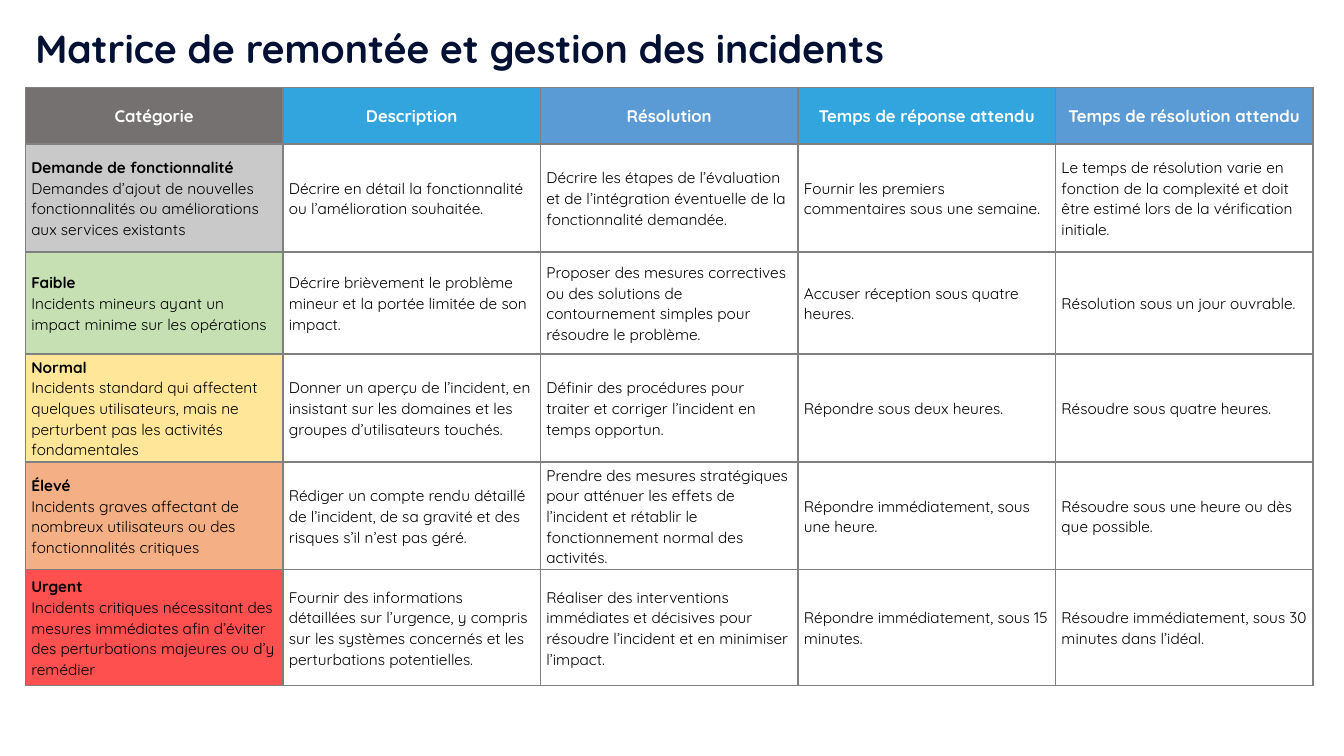
from dataclasses import dataclass

from lxml.etree import SubElement
from pptx import Presentation
from pptx.dml.color import RGBColor
from pptx.enum.text import MSO_ANCHOR, MSO_AUTO_SIZE, PP_ALIGN
from pptx.oxml.ns import qn
from pptx.util import Cm, Pt


@dataclass(frozen=True)
class Theme:
    """Colours, font and type sizes of the slide."""
    font: str = "Quicksand"
    title_color: str = "011033"
    header_color: str = "FFFFFF"
    body_color: str = "000000"
    border_color: str = "808080"
    header_fills: tuple = ("757171", "32A5DE", "5B9BD5", "32A5DE", "5B9BD5")
    level_fills: tuple = ("C9C9C9", "C6E0B4", "FFE699", "F4B084", "FF5050")
    title_size: int = 28
    header_size: int = 12
    body_size: int = 11
    line_spacing: float = 1.07


@dataclass(frozen=True)
class Box:
    """A rectangle on the page."""
    left: int
    top: int
    width: int
    height: int


THEME = Theme()
TITLE = "Matrice de remontée et gestion des incidents"
HEADERS = ("Catégorie", "Description", "Résolution",
           "Temps de réponse attendu", "Temps de résolution attendu")
LEVELS = (
    ("Demande de fonctionnalité",
     "Demandes d’ajout de nouvelles fonctionnalités ou améliorations aux services existants",
     "Décrire en détail la fonctionnalité ou l’amélioration souhaitée.",
     "Décrire les étapes de l’évaluation et de l’intégration éventuelle de la fonctionnalité demandée.",
     "Fournir les premiers commentaires sous une semaine.",
     "Le temps de résolution varie en fonction de la complexité et doit être estimé lors de la vérification initiale."),
    ("Faible",
     "Incidents mineurs ayant un impact minime sur les opérations",
     "Décrire brièvement le problème mineur et la portée limitée de son impact.",
     "Proposer des mesures correctives ou des solutions de contournement simples pour résoudre le problème.",
     "Accuser réception sous quatre heures.",
     "Résolution sous un jour ouvrable."),
    ("Normal",
     "Incidents standard qui affectent quelques utilisateurs, mais ne perturbent pas les activités fondamentales",
     "Donner un aperçu de l’incident, en insistant sur les domaines et les groupes d’utilisateurs touchés.",
     "Définir des procédures pour traiter et corriger l’incident en temps opportun.",
     "Répondre sous deux heures.",
     "Résoudre sous quatre heures."),
    ("Élevé",
     "Incidents graves affectant de nombreux utilisateurs ou des fonctionnalités critiques",
     "Rédiger un compte rendu détaillé de l’incident, de sa gravité et des risques s’il n’est pas géré.",
     "Prendre des mesures stratégiques pour atténuer les effets de l’incident et rétablir le fonctionnement normal des activités.",
     "Répondre immédiatement, sous une heure.",
     "Résoudre sous une heure ou dès que possible."),
    ("Urgent",
     "Incidents critiques nécessitant des mesures immédiates afin d’éviter des perturbations majeures ou d’y remédier",
     "Fournir des informations détaillées sur l’urgence, y compris sur les systèmes concernés et les perturbations potentielles.",
     "Réaliser des interventions immédiates et décisives pour résoudre l’incident et en minimiser l’impact.",
     "Répondre immédiatement, sous 15 minutes.",
     "Résoudre immédiatement, sous 30 minutes dans l’idéal."),
)
ROW_HEIGHTS = (1.42, 2.72, 2.57, 2.72, 2.72, 2.92)


def write(para, text, size=THEME.body_size, color=THEME.body_color,
          bold=False, align=PP_ALIGN.LEFT, spacing=THEME.line_spacing):
    """Add a formatted span of text to a paragraph."""
    para.alignment = align
    para.line_spacing = spacing
    span = para.add_run()
    span.text = text
    span.font.name = THEME.font
    span.font.size = Pt(size)
    span.font.bold = bold
    span.font.color.rgb = RGBColor.from_string(color)


def style_cell(cell, fill=None):
    """Set the margins, borders and fill of a table cell."""
    cell.vertical_anchor = MSO_ANCHOR.MIDDLE
    cell.margin_left = cell.margin_right = Cm(0.15)
    cell.margin_top = cell.margin_bottom = Cm(0)
    properties = cell._tc.get_or_add_tcPr()
    for side in ("a:lnL", "a:lnR", "a:lnT", "a:lnB"):
        line = SubElement(properties, qn(side), w=str(Pt(1)))
        solid = SubElement(line, qn("a:solidFill"))
        SubElement(solid, qn("a:srgbClr"), val=THEME.border_color)
    if fill:
        cell.fill.solid()
        cell.fill.fore_color.rgb = RGBColor.from_string(fill)
    else:
        cell.fill.background()


def add_title(page, box):
    """Place the slide title in the box."""
    frame = page.shapes.add_textbox(box.left, box.top, box.width, box.height).text_frame
    frame.word_wrap = True
    frame.auto_size = MSO_AUTO_SIZE.SHAPE_TO_FIT_TEXT
    write(frame.paragraphs[0], TITLE, size=THEME.title_size,
          color=THEME.title_color, bold=True, spacing=1.0)


def add_matrix(page, box):
    """Place the incident matrix in the box."""
    table = page.shapes.add_table(len(LEVELS) + 1, len(HEADERS), box.left,
                                  box.top, box.width, box.height).table
    table.first_row = table.horz_banding = False
    for column in table.columns:
        column.width = box.width // len(HEADERS)
    for row, height in zip(table.rows, ROW_HEIGHTS):
        row.height = Cm(height)
    for index, (header, fill) in enumerate(zip(HEADERS, THEME.header_fills)):
        cell = table.cell(0, index)
        style_cell(cell, fill)
        write(cell.text_frame.paragraphs[0], header, size=THEME.header_size,
              color=THEME.header_color, bold=True, align=PP_ALIGN.CENTER)
    for row, (level, fill) in enumerate(zip(LEVELS, THEME.level_fills), start=1):
        name, *texts = level
        for index, text in enumerate(texts):
            cell = table.cell(row, index)
            para = cell.text_frame.paragraphs[0]
            style_cell(cell, None if index else fill)
            if index == 0:
                write(para, name, bold=True)
                para.add_line_break()
            write(para, text)


def main():
    """Build the deck and save it."""
    deck = Presentation()
    deck.slide_width, deck.slide_height = Cm(33.87), Cm(19.05)
    page = deck.slides.add_slide(deck.slide_layouts[6])
    add_title(page, Box(Cm(0.64), Cm(0.5), Cm(31.55), Cm(1.45)))
    add_matrix(page, Box(Cm(0.64), Cm(2.21), Cm(32.45), Cm(sum(ROW_HEIGHTS))))
    deck.save("out.pptx")


if __name__ == "__main__":
    main()
